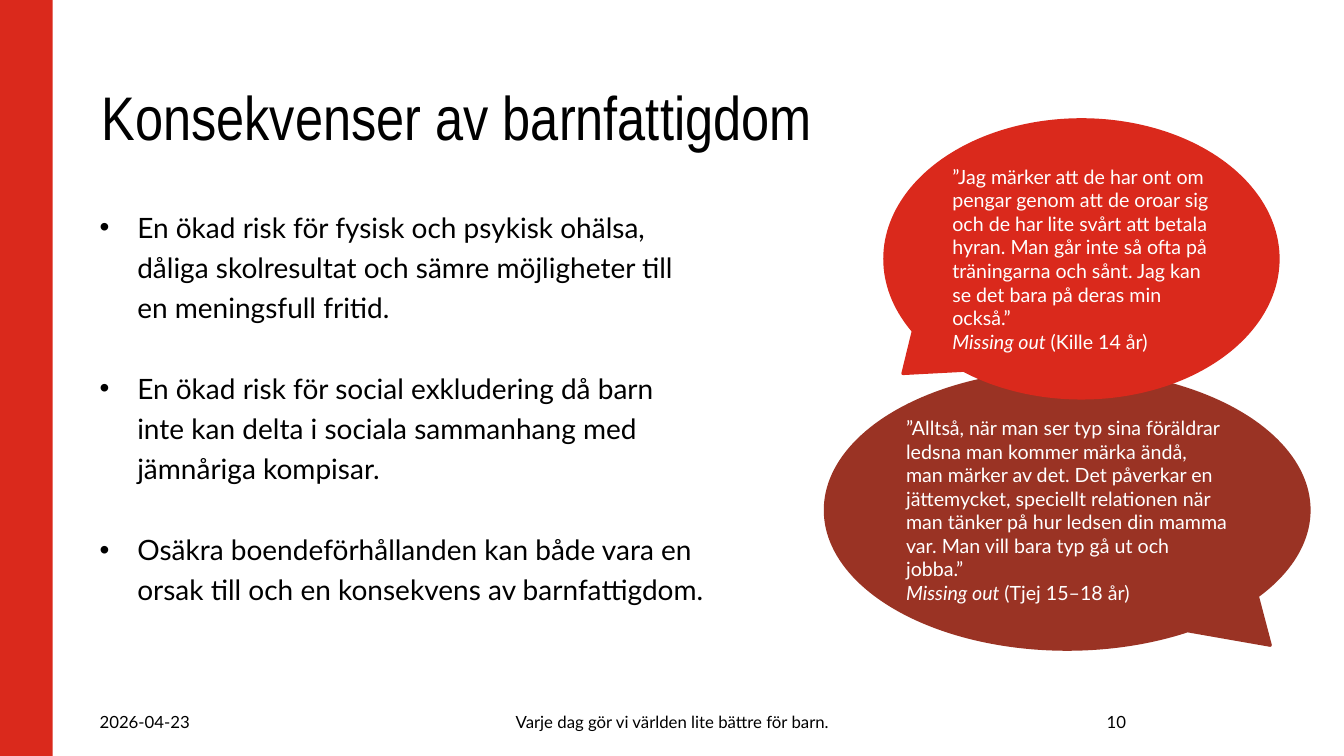
from lxml.etree import SubElement
from pptx import Presentation
from pptx.dml.color import RGBColor
from pptx.enum.shapes import MSO_SHAPE
from pptx.enum.text import MSO_ANCHOR, PP_ALIGN
from pptx.oxml.ns import qn
from pptx.util import Cm, Pt

RED, DARK_RED, BLACK, WHITE = "DA291C", "9A3324", "000000", "FFFFFF"
BODY_FONT, TITLE_FONT = "Lato", "Arial Narrow"

CONSEQUENCES = [
    "En ökad risk för fysisk och psykisk ohälsa, dåliga skolresultat och "
    "sämre möjligheter till en meningsfull fritid.",
    "En ökad risk för social exkludering då barn inte kan delta i sociala "
    "sammanhang med jämnåriga kompisar.",
    "Osäkra boendeförhållanden kan både vara en orsak till och en "
    "konsekvens av barnfattigdom.",
]
GIRL_QUOTE = (
    "”Alltså, när man ser typ sina föräldrar ledsna man kommer märka ändå, "
    "man märker av det. Det påverkar en jättemycket, speciellt relationen "
    "när man tänker på hur ledsen din mamma var. Man vill bara typ gå ut "
    "och jobba.”"
)
BOY_QUOTE = (
    "”Jag märker att de har ont om pengar genom att de oroar sig och de har "
    "lite svårt att betala hyran. Man går inte så ofta på träningarna och "
    "sånt. Jag kan se det bara på deras min också.”"
)


def rgb(color):
    return RGBColor.from_string(color)


def add_run(p, text, size, color=BLACK, font=BODY_FONT, italic=False):
    r = p.add_run()
    r.text = text
    r.font.size = Pt(size)
    r.font.name = font
    r.font.italic = italic
    r.font.color.rgb = rgb(color)


def add_text_frame(s, box, anchor=MSO_ANCHOR.MIDDLE):
    tf = s.shapes.add_textbox(*map(Cm, box)).text_frame
    tf.word_wrap = True
    tf.vertical_anchor = anchor
    return tf


def add_line_of_text(s, box, text, size=12, font=BODY_FONT, align=PP_ALIGN.LEFT):
    p = add_text_frame(s, box).paragraphs[0]
    p.alignment = align
    add_run(p, text, size, font=font)
    return p


def add_bullets(s, box, items):
    tf = add_text_frame(s, box, MSO_ANCHOR.TOP)
    for i, item in enumerate(items):
        p = tf.add_paragraph() if i else tf.paragraphs[0]
        p.line_spacing = 1.2
        if i:
            p.space_before = Pt(28.8)
        pPr = p._p.get_or_add_pPr()
        pPr.set("marL", str(Cm(0.95)))
        pPr.set("indent", str(-Cm(0.95)))
        SubElement(pPr, qn("a:buFont"), typeface="Arial")
        SubElement(pPr, qn("a:buChar"), char="•")
        add_run(p, item, 20)


def add_filled_shape(s, kind, box, color):
    sp = s.shapes.add_shape(kind, *map(Cm, box))
    sp.shadow.inherit = False
    sp.fill.solid()
    sp.fill.fore_color.rgb = rgb(color)
    return sp


def add_quote(s, box, tip, color, quote, speaker):
    """Speech bubble; tip is the tail's offset from the centre, in box sizes."""
    sp = add_filled_shape(s, MSO_SHAPE.OVAL_CALLOUT, box, color)
    sp.line.color.rgb = rgb(color)
    sp.line.width = Pt(2.25)
    sp.adjustments[0], sp.adjustments[1] = tip
    tf = sp.text_frame
    tf.word_wrap = True
    tf.vertical_anchor = MSO_ANCHOR.MIDDLE
    p = tf.paragraphs[0]
    p.alignment = PP_ALIGN.LEFT
    add_run(p, quote, 14, WHITE)
    p = tf.add_paragraph()
    p.alignment = PP_ALIGN.LEFT
    add_run(p, "Missing out ", 14, WHITE, italic=True)
    add_run(p, speaker, 14, WHITE)


def main():
    prs = Presentation()
    prs.slide_width, prs.slide_height = Cm(33.87), Cm(19.05)
    s = prs.slides.add_slide(prs.slide_layouts[6])

    side_bar = add_filled_shape(s, MSO_SHAPE.RECTANGLE, (0, 0, 1.33, 19.05), RED)
    side_bar.line.fill.background()

    add_bullets(s, (2.26, 5, 15.8, 12.45), CONSEQUENCES)
    title = add_line_of_text(s, (2.31, 1.78, 26.47, 2.51),
                             "Konsekvenser av barnfattigdom", 44, TITLE_FONT)
    title.line_spacing = 0.9

    footer_top, footer_height = 17.93, 0.51
    for left, width, text, align in (
        (2.26, 4.78, "2026-04-23", PP_ALIGN.LEFT),
        (7.04, 19.81, "Varje dag gör vi världen lite bättre för barn.", PP_ALIGN.CENTER),
        (26.85, 1.78, "10", PP_ALIGN.RIGHT),
    ):
        add_line_of_text(s, (left, footer_top, width, footer_height), text, align=align)

    add_quote(s, (20.8, 9.35, 12.19, 7.01), (0.42, 0.486), DARK_RED,
              GIRL_QUOTE, "(Tjej 15–18 år)")
    add_quote(s, (22.3, 3.02, 9.91, 7.01), (-0.454, 0.412), RED,
              BOY_QUOTE, "(Kille 14 år)")

    prs.save("out.pptx")


if __name__ == "__main__":
    main()
